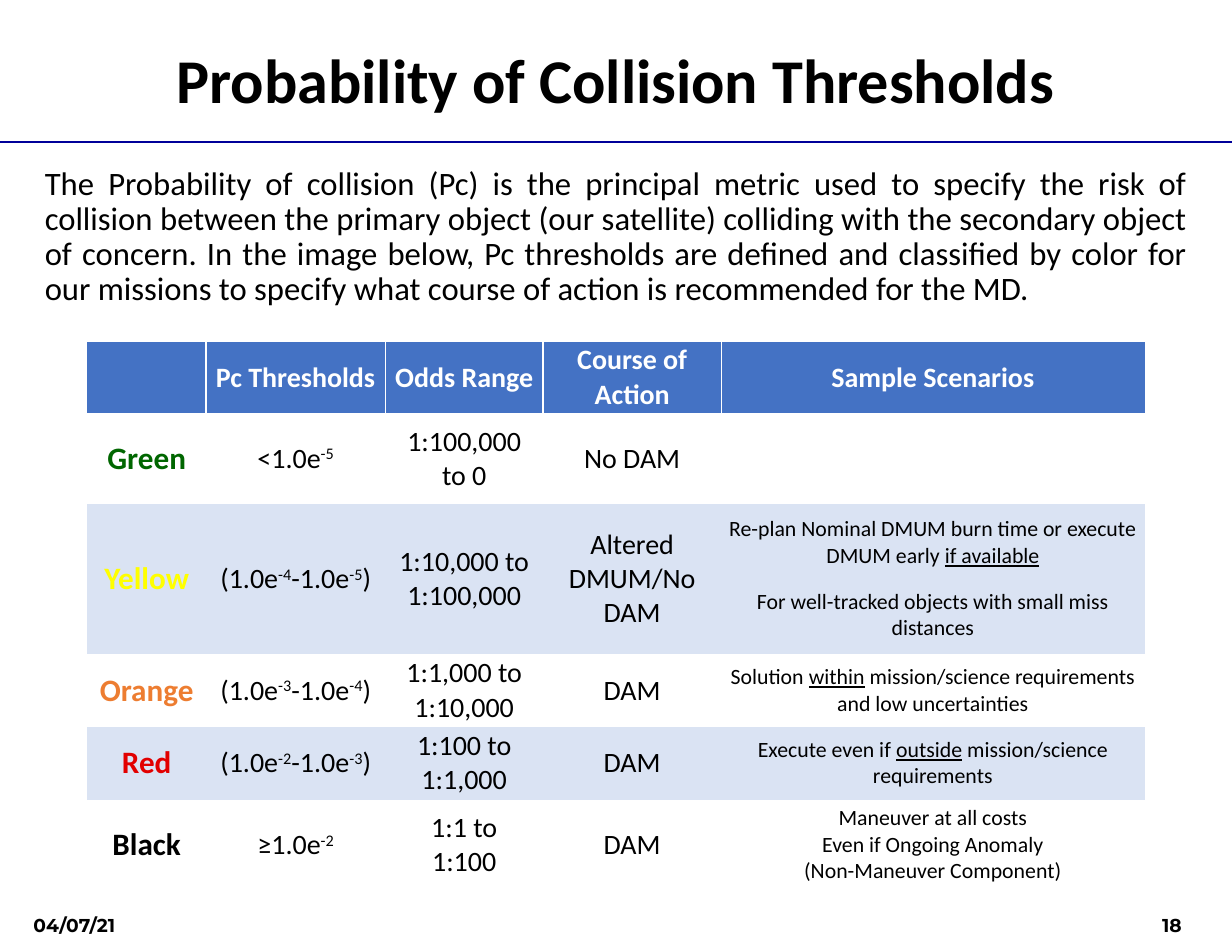
"""Build the collision probability thresholds slide."""
from dataclasses import dataclass

from lxml import etree
from pptx import Presentation
from pptx import util as u
from pptx.dml.color import RGBColor
from pptx.enum import shapes, text
from pptx.oxml import ns

COLORS = {
    "black": "000000", "white": "FFFFFF", "rule": "000099", "header": "4472C4",
    "band": "DAE3F3", "green": "006600", "yellow": "FFFF00",
    "orange": "ED7D31", "red": "E20000",
}
ALIGN, ANCHOR = text.PP_ALIGN, text.MSO_ANCHOR
NO_STYLE = "{2D5ABB26-0587-4C30-8999-92F81FD0307C}"
HEADERS = ("", "Pc Thresholds", "Odds Range", "Course of Action", "Sample Scenarios")
COL_WIDTHS = (1.06, 1.6, 1.41, 1.59, 3.78)
HEADER_HEIGHT = 0.64
INTRO = (
    "The Probability of collision (Pc) is the principal metric used to specify the risk of "
    "collision between the primary object (our satellite) colliding with the secondary object "
    "of concern. In the image below, Pc thresholds are defined and classified by color for "
    "our missions to specify what course of action is recommended for the MD."
)


@dataclass
class Style:
    """Font and spacing of a piece of text."""
    size: float
    bold: bool = False
    color: str = "black"
    name: str = "Calibri"
    align: ALIGN = ALIGN.CENTER
    gap: float = 0


@dataclass
class Level:
    """One risk level; ^ marks superscripts and _ marks underlines."""
    name: str
    height: float
    threshold: str
    odds: str
    action: str
    scenarios: str = ""
    gap: float = 0


LEVELS = (
    Level("Green", 0.81, "<1.0e^-5^", "1:100,000 to 0", "No DAM"),
    Level("Yellow", 1.34, "(1.0e^-4^-1.0e^-5^)", "1:10,000 to\n1:100,000",
          "Altered DMUM/No DAM",
          "Re-plan Nominal DMUM burn time or execute DMUM early _if available_\n"
          "For well-tracked objects with small miss distances", 12.5),
    Level("Orange", 0.65, "(1.0e^-3^-1.0e^-4^)", "1:1,000 to 1:10,000", "DAM",
          "Solution _within_ mission/science requirements and low uncertainties"),
    Level("Red", 0.65, "(1.0e^-2^-1.0e^-3^)", "1:100 to 1:1,000", "DAM",
          "Execute even if _outside_ mission/science requirements"),
    Level("Black", 0.81, "≥1.0e^-2^", "1:1 to\n1:100", "DAM",
          "Maneuver at all costs\nEven if Ongoing Anomaly\n(Non-Maneuver Component)"),
)


def rgb(name: str) -> RGBColor:
    """Look up a named colour."""
    return RGBColor.from_string(COLORS[name])


def add_run(p, words: str, style: Style, underline: bool, raised: bool) -> None:
    """Append one formatted run."""
    r = p.add_run()
    r.text = words
    formats = {"name": style.name, "size": u.Pt(style.size),
               "bold": style.bold, "underline": underline}
    for key, value in formats.items():
        setattr(r.font, key, value)
    r.font.color.rgb = rgb(style.color)
    if raised:
        r._r.get_or_add_rPr().set("baseline", "30000")


def write(tf, words: str, style: Style) -> None:
    """Fill a text frame, one paragraph a line, honouring the marks."""
    for n, line in enumerate(words.split("\n")):
        p = tf.add_paragraph() if n else tf.paragraphs[0]
        formats = {"alignment": style.align,
                   "space_before": u.Pt(style.gap if n else 0)}
        for key, value in formats.items():
            setattr(p, key, value)
        for i, part in enumerate(line.split("_")):
            for j, piece in enumerate(part.split("^")):
                if piece:
                    add_run(p, piece, style, i % 2 == 1, j % 2 == 1)


def place(sp, left: float, top: float, width: float, height: float) -> None:
    """Move and size a shape."""
    box = {"left": left, "top": top, "width": width, "height": height}
    for key, value in box.items():
        setattr(sp, key, u.Inches(value))


def add_footer(s, box: tuple, words: str, align: ALIGN, margin_right: float) -> None:
    """Add a footer label."""
    sp = s.shapes.add_textbox(*map(u.Inches, box))
    sp.text_frame.word_wrap = True
    sp.text_frame.margin_right = u.Inches(margin_right)
    write(sp.text_frame, words, Style(12, True, name="Montserrat", align=align))


def add_border(cell, side: str) -> None:
    """Give one side of a cell a thin white border."""
    ln = etree.Element(ns.qn(f"a:ln{side}"), w=str(u.Pt(1)))
    fill = etree.SubElement(ln, ns.qn("a:solidFill"))
    etree.SubElement(fill, ns.qn("a:srgbClr"), val=COLORS["white"])
    cell._tc.get_or_add_tcPr().insert(0, ln)


def fill_cell(cell, words: str, style: Style, fill: str) -> None:
    """Format and fill a table cell."""
    formats = {"margin_left": u.Inches(0.07), "margin_right": u.Inches(0.07),
               "margin_top": 0, "margin_bottom": 0, "vertical_anchor": ANCHOR.MIDDLE}
    for key, value in formats.items():
        setattr(cell, key, value)
    cell.fill.solid()
    cell.fill.fore_color.rgb = rgb(fill)
    write(cell.text_frame, words, style)


def add_levels(s) -> None:
    """Add the table of risk levels."""
    heights = [HEADER_HEIGHT] + [level.height for level in LEVELS]
    box = (0.78, 3.05, sum(COL_WIDTHS), sum(heights))
    table = s.shapes.add_table(len(heights), len(COL_WIDTHS), *map(u.Inches, box)).table
    table.first_row = table.horz_banding = False
    table._tbl.tblPr.find(ns.qn("a:tableStyleId")).text = NO_STYLE
    for col, width in zip(table.columns, COL_WIDTHS):
        col.width = u.Inches(width)
    for row, height in zip(table.rows, heights):
        row.height = u.Inches(height)
    for c, header in enumerate(HEADERS):
        cell = table.cell(0, c)
        fill_cell(cell, header, Style(18, True, "white"), "header")
        if c < len(HEADERS) - 1:
            add_border(cell, "R")
        if c:
            add_border(cell, "L")
    for n, level in enumerate(LEVELS, 1):
        values = (
            (level.name, Style(20, True, level.name.lower())),
            (level.threshold, Style(18)),
            (level.odds, Style(18)),
            (level.action, Style(18)),
            (level.scenarios, Style(14, gap=level.gap)),
        )
        for c, (words, style) in enumerate(values):
            fill_cell(table.cell(n, c), words, style, "white" if n % 2 else "band")


def main() -> None:
    """Build and save the slide."""
    prs = Presentation()
    prs.slide_width, prs.slide_height = u.Inches(11), u.Inches(8.5)
    s = prs.slides.add_slide(prs.slide_layouts[1])
    title, body = s.placeholders
    place(title, 0.49, 0.32, 10.01, 0.77)
    place(body, 0.3, 1.44, 10.4, 1.44)
    for sp, anchor in ((title, ANCHOR.MIDDLE), (body, ANCHOR.TOP)):
        sp.text_frame.auto_size = text.MSO_AUTO_SIZE.NONE
        sp.text_frame.vertical_anchor = anchor
    write(title.text_frame, "Probability of Collision Thresholds", Style(40, True))
    write(body.text_frame, INTRO, Style(21, align=ALIGN.JUSTIFY))
    p = body.text_frame.paragraphs[0]
    p.line_spacing = 0.9
    pPr = p._p.get_or_add_pPr()
    pPr.set("marL", "0")
    pPr.set("indent", "0")
    etree.SubElement(pPr, ns.qn("a:buNone"))

    rule = s.shapes.add_connector(shapes.MSO_CONNECTOR.STRAIGHT, 0, u.Inches(1.27),
                                  prs.slide_width, u.Inches(1.27))
    rule.line.color.rgb = rgb("rule")
    rule.line.width = u.Pt(1.5)
    etree.SubElement(rule._element.spPr, ns.qn("a:effectLst"))

    add_levels(s)
    add_footer(s, (0.2, 8.11, 0.97, 0.3), "04/07/21", ALIGN.LEFT, 0)
    add_footer(s, (9.51, 8.11, 1.39, 0.3), "18", ALIGN.RIGHT, 0.35)
    prs.save("out.pptx")


if __name__ == "__main__":
    main()
